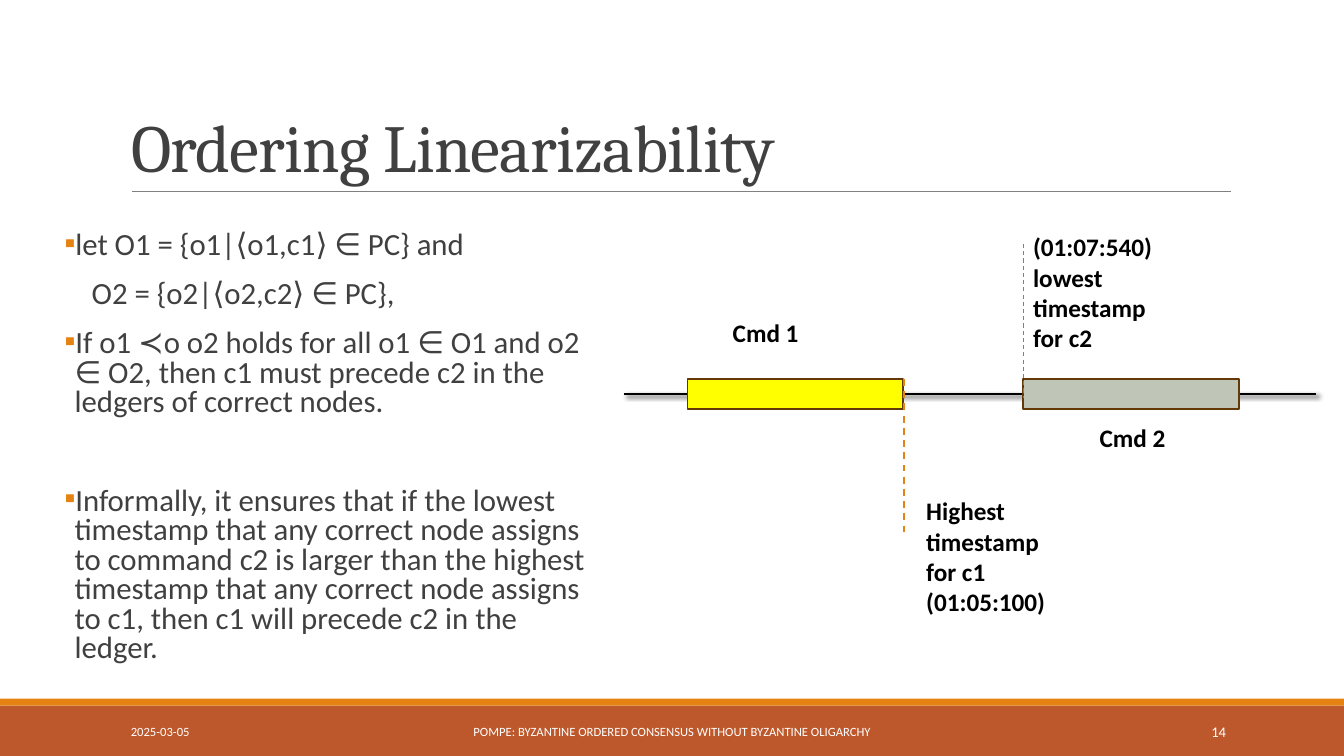
from dataclasses import dataclass

from lxml import etree
from pptx import Presentation
from pptx import util as u
from pptx.dml.color import RGBColor
from pptx.enum import dml, shapes, text
from pptx.oxml import ns

WHITE = RGBColor(0xFF, 0xFF, 0xFF)
BLACK = RGBColor(0x00, 0x00, 0x00)
INK = RGBColor(0x40, 0x40, 0x40)
GRAY = RGBColor(0x80, 0x80, 0x80)
RUST = RGBColor(0xBD, 0x58, 0x2C)
ORANGE = RGBColor(0xE4, 0x83, 0x12)
YELLOW = RGBColor(0xFF, 0xFF, 0x00)
SAGE = RGBColor(0xBF, 0xC6, 0xB8)
BROWN = RGBColor(0x64, 0x39, 0x08)

WIDTH, HEIGHT = u.Inches(13.33), u.Inches(7.5)
LEFT, MIDDLE, RIGHT = text.PP_ALIGN.LEFT, text.PP_ALIGN.CENTER, text.PP_ALIGN.RIGHT
C1_START, C1_END, C2_START = 51.15, 67.28, 76.13
BAR_TOP, BAR_WIDTH, BAR_HEIGHT = 50.13, 16.05, 4


@dataclass(frozen=True)
class Area:
    left: float
    top: float
    width: float
    height: float

    def lengths(self) -> tuple[int, int, int, int]:
        return (across(self.left), down(self.top),
                across(self.width), down(self.height))


@dataclass(frozen=True)
class Bar:
    area: Area
    fill: RGBColor
    outline: RGBColor | None = None


@dataclass(frozen=True)
class Stroke:
    start: tuple[float, float]
    end: tuple[float, float]
    color: RGBColor
    points: float
    dashed: bool = False
    shaded: bool = False


@dataclass(frozen=True)
class Label:
    area: Area
    lines: tuple[str, ...]
    size: float = 18
    color: RGBColor = BLACK
    bold: bool = True
    align: text.PP_ALIGN = LEFT
    anchor: text.MSO_ANCHOR = text.MSO_ANCHOR.TOP


@dataclass(frozen=True)
class Point:
    words: str
    bullet: bool = True
    before: float = 12


def across(percent: float) -> int:
    return round(WIDTH * percent / 100)


def down(percent: float) -> int:
    return round(HEIGHT * percent / 100)


def add_node(parent, tag: str, **attributes: str):
    return etree.SubElement(parent, ns.qn(tag), attributes)


def style(paragraph, size: float, color: RGBColor, bold: bool = False,
          face: str = "Calibri") -> None:
    for run in paragraph.runs:
        run.font.size = u.Pt(size)
        run.font.bold = bold
        run.font.name = face
        run.font.color.rgb = color


def draw_bar(slide, bar: Bar) -> None:
    block = slide.shapes.add_shape(shapes.MSO_SHAPE.RECTANGLE, *bar.area.lengths())
    block.shadow.inherit = False
    block.fill.solid()
    block.fill.fore_color.rgb = bar.fill
    if bar.outline is None:
        block.line.fill.background()
    else:
        block.line.color.rgb = bar.outline
        block.line.width = u.Pt(1.25)


def draw_stroke(slide, stroke: Stroke) -> None:
    (x1, y1), (x2, y2) = stroke.start, stroke.end
    line = slide.shapes.add_connector(shapes.MSO_CONNECTOR.STRAIGHT,
                                      across(x1), down(y1), across(x2), down(y2))
    line.line.color.rgb = stroke.color
    line.line.width = u.Pt(stroke.points)
    if stroke.dashed:
        line.line.dash_style = dml.MSO_LINE.DASH
    effects = add_node(line._element.spPr, "a:effectLst")
    if stroke.shaded:
        shade = add_node(effects, "a:outerShdw", blurRad=str(u.Pt(3)),
                         dist=str(u.Pt(2)), dir="2700000", rotWithShape="0")
        tint = add_node(shade, "a:srgbClr", val=str(BLACK))
        add_node(tint, "a:alpha", val="60000")


def draw_label(slide, label: Label) -> None:
    frame = slide.shapes.add_textbox(*label.area.lengths()).text_frame
    frame.word_wrap = True
    frame.vertical_anchor = label.anchor
    frame.text = "\n".join(label.lines)
    for paragraph in frame.paragraphs:
        paragraph.alignment = label.align
        style(paragraph, label.size, label.color, label.bold)


def draw_title(slide, area: Area, words: str) -> None:
    title = slide.shapes.title
    title.left, title.top, title.width, title.height = area.lengths()
    frame = title.text_frame
    frame.text = words
    frame.auto_size = text.MSO_AUTO_SIZE.NONE
    frame.vertical_anchor = text.MSO_ANCHOR.BOTTOM
    heading = frame.paragraphs[0]
    heading.alignment = LEFT
    heading.line_spacing = 0.85
    style(heading, 48, INK, face="Cambria")
    heading.runs[0].font._element.set("spc", "-50")


def draw_points(slide, area: Area, points: tuple[Point, ...]) -> None:
    frame = slide.shapes.add_textbox(*area.lengths()).text_frame
    frame.word_wrap = True
    frame.margin_left = frame.margin_right = 0
    frame.text = "\n".join(point.words for point in points)
    for paragraph, point in zip(frame.paragraphs, points):
        paragraph.line_spacing = 0.8
        paragraph.space_before = u.Pt(point.before)
        paragraph.space_after = u.Pt(2)
        style(paragraph, 22, INK)
        layout = paragraph._p.get_or_add_pPr()
        if point.bullet:
            layout.set("marL", str(u.Inches(0.1)))
            layout.set("indent", str(-u.Inches(0.1)))
            tint = add_node(layout, "a:buClr")
            add_node(tint, "a:srgbClr", val=str(ORANGE))
            add_node(layout, "a:buFont", typeface="Calibri")
            add_node(layout, "a:buChar", char="▪")
        else:
            layout.set("marL", str(u.Inches(0.27)))
            layout.set("indent", "0")


BARS = (
    Bar(Area(0, 93.33, 100, 6.67), RUST),
    Bar(Area(0, 92.4, 100, 0.93), ORANGE),
    Bar(Area(C1_START, BAR_TOP, BAR_WIDTH, BAR_HEIGHT), YELLOW, BROWN),
    Bar(Area(C2_START, BAR_TOP, BAR_WIDTH, BAR_HEIGHT), SAGE, BROWN),
)
BACK_STROKES = (
    Stroke((9.82, 25.33), (91.58, 25.33), GRAY, 0.5),
    Stroke((46.43, 52.13), (97.95, 52.13), BLACK, 2, shaded=True),
)
TIMESTAMP_STROKES = (
    Stroke((C1_END, BAR_TOP), (C1_END, 70.4), ORANGE, 1.25, dashed=True),
    Stroke((C2_START, 32.27), (C2_START, 52.67), GRAY, 0.75, dashed=True),
)
FOOTER = dict(color=WHITE, bold=False, anchor=text.MSO_ANCHOR.MIDDLE)
LABELS = (
    Label(Area(53.78, 41.33, 12.08, 5.47), ("Cmd 1",)),
    Label(Area(81.08, 55.2, 12.08, 5.47), ("Cmd 2",)),
    Label(Area(68.18, 64.93, 12.08, 17.47), ("Highest timestamp for c1", "(01:05:100)")),
    Label(Area(C2_START, 30, 12.08, 17.47), ("(01:07:540)", "lowest timestamp for c2")),
    Label(Area(9, 94.13, 20.25, 5.33), ("2025-03-05",), 9, **FOOTER),
    Label(Area(30.23, 94.13, 39.53, 5.33),
          ("POMPE: BYZANTINE ORDERED CONSENSUS WITHOUT BYZANTINE OLIGARCHY",),
          9, align=MIDDLE, **FOOTER),
    Label(Area(81.23, 94.13, 10.73, 5.33), ("14",), 10.5, align=RIGHT, **FOOTER),
)
POINTS = (
    Point("let O1 = {o1|⟨o1,c1⟩ ∈ PC} and"),
    Point("O2 = {o2|⟨o2,c2⟩ ∈ PC},", bullet=False),
    Point("If o1 ≺o o2 holds for all o1 ∈ O1 and o2 ∈ O2, then c1 must precede c2 "
          "in the ledgers of correct nodes."),
    Point("Informally, it ensures that if the lowest timestamp that any correct node "
          "assigns to command c2 is larger than the highest timestamp that any correct "
          "node assigns to c1, then c1 will precede c2 in the ledger.", before=47),
)


def main() -> None:
    deck = Presentation()
    deck.slide_width, deck.slide_height = WIDTH, HEIGHT
    slide = deck.slides.add_slide(deck.slide_layouts[5])
    draw_title(slide, Area(9, 4.13, 82.5, 21.2), "Ordering Linearizability")
    draw_points(slide, Area(4.8, 30, 40.13, 63.47), POINTS)
    for stroke in BACK_STROKES:
        draw_stroke(slide, stroke)
    for bar in BARS:
        draw_bar(slide, bar)
    for stroke in TIMESTAMP_STROKES:
        draw_stroke(slide, stroke)
    for label in LABELS:
        draw_label(slide, label)
    deck.save("out.pptx")


if __name__ == "__main__":
    main()
